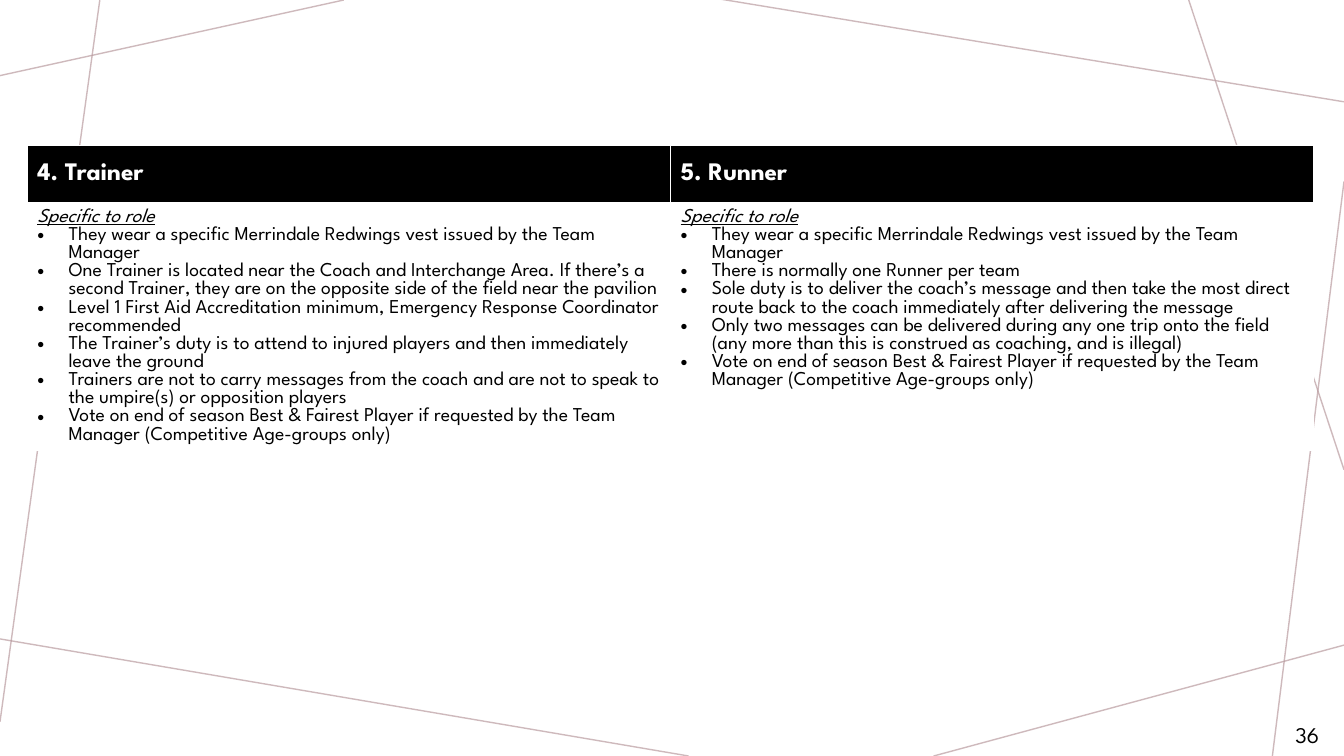
from lxml import etree
from pptx import Presentation
from pptx import util as u
from pptx.dml.color import RGBColor
from pptx.enum import shapes, text
from pptx.oxml import ns

BLACK = RGBColor(0x00, 0x00, 0x00)
WHITE = RGBColor(0xFF, 0xFF, 0xFF)
MAUVE = RGBColor(0xBA, 0x9C, 0xA0)

BACKGROUND_LINES = [
    ((3.41, 0), (0, 0.75)),
    ((0.99, 0), (0, 7.16)),
    ((6.83, 7.5), (-0.05, 6.33)),
    ((13.33, 6.4), (9.26, 7.5)),
    ((13.33, 1.8), (12.62, 7.5)),
    ((13.33, 4.66), (11.79, 0)),
    ((13.33, 1.01), (7.14, -0.01)),
]

# Duties shared by both roles
VEST = "They wear a specific Merrindale Redwings vest issued by the Team Manager"
VOTE = ("Vote on end of season Best & Fairest Player if requested by the Team "
        "Manager (Competitive Age-groups only)")

ROLES = {
    "4. Trainer": [
        VEST,
        "One Trainer is located near the Coach and Interchange Area. If there’s a "
        "second Trainer, they are on the opposite side of the field near the pavilion",
        "Level 1 First Aid Accreditation minimum, Emergency Response Coordinator "
        "recommended",
        "The Trainer’s duty is to attend to injured players and then immediately "
        "leave the ground",
        "Trainers are not to carry messages from the coach and are not to speak to "
        "the umpire(s) or opposition players",
        VOTE,
    ],
    "5. Runner": [
        VEST,
        "There is normally one Runner per team",
        "Sole duty is to deliver the coach’s message and then take the most direct "
        "route back to the coach immediately after delivering the message",
        "Only two messages can be delivered during any one trip onto the field "
        "(any more than this is construed as coaching, and is illegal)",
        VOTE,
    ],
}


def add_xml(parent, tag, **attributes):
    return etree.SubElement(parent, ns.qn(tag), attributes)


def write(para, words, size=14, color=BLACK, bold=False, italic=False,
          underline=False, bullet=False, font="League Spartan"):
    span = para.add_run()
    span.text = words
    span.font.name = font
    span.font.size = u.Pt(size)
    span.font.color.rgb = color
    span.font.bold = bold
    span.font.italic = italic
    span.font.underline = underline
    if bullet:
        indent = u.Inches(0.31)
        properties = para._p.get_or_add_pPr()
        properties.set("marL", str(indent))
        properties.set("indent", str(-indent))
        add_xml(add_xml(properties, "a:buClr"), "a:srgbClr", val=str(color))
        add_xml(properties, "a:buFont", typeface="Arial")
        add_xml(properties, "a:buChar", char="•")


class RolesSlide:
    def __init__(self, deck):
        self.slide = deck.slides.add_slide(deck.slide_layouts[6])
        self.slide.background.fill.solid()
        self.slide.background.fill.fore_color.rgb = WHITE

    def line(self, start, end, color=MAUVE, opacity=70):
        points = [u.Inches(value) for value in (*start, *end)]
        line = self.slide.shapes.add_connector(shapes.MSO_CONNECTOR.STRAIGHT, *points)
        line.line.color.rgb = color
        line.line.width = u.Pt(1)
        tint = line._element.find(".//" + ns.qn("a:srgbClr"))
        add_xml(tint, "a:alpha", val=str(opacity * 1000))
        add_xml(line._element.spPr, "a:effectLst")

    def cell(self, cell, fill, bottom=1):
        cell.fill.solid()
        cell.fill.fore_color.rgb = fill
        # Borders come before the fill
        properties = cell._tc.get_or_add_tcPr()
        widths = {"a:lnL": 1, "a:lnR": 1, "a:lnT": 1, "a:lnB": bottom}
        for position, (side, width) in enumerate(widths.items()):
            border = add_xml(properties, side, w=str(u.Pt(width)))
            add_xml(add_xml(border, "a:solidFill"), "a:srgbClr", val=str(WHITE))
            properties.insert(position, border)

    def table(self, roles, left, top, column_width, row_heights):
        frame = self.slide.shapes.add_table(
            len(row_heights), len(roles), u.Inches(left), u.Inches(top),
            u.Inches(column_width * len(roles)), u.Inches(sum(row_heights)))
        table = frame.table
        for row, height in zip(table.rows, row_heights):
            row.height = u.Inches(height)
        for column, (role, duties) in enumerate(roles.items()):
            table.columns[column].width = u.Inches(column_width)
            header, body = table.cell(0, column), table.cell(1, column)
            self.cell(header, BLACK, bottom=3)
            header.vertical_anchor = text.MSO_ANCHOR.MIDDLE
            write(header.text_frame.paragraphs[0], role, size=18, color=WHITE, bold=True)
            self.cell(body, WHITE)
            write(body.text_frame.paragraphs[0], "Specific to role",
                  italic=True, underline=True)
            for duty in duties:
                write(body.text_frame.add_paragraph(), duty, bullet=True)

    def label(self, words, left, top, width, height, **style):
        box = self.slide.shapes.add_textbox(
            u.Inches(left), u.Inches(top), u.Inches(width), u.Inches(height))
        box.text_frame.word_wrap = True
        box.text_frame.vertical_anchor = text.MSO_ANCHOR.MIDDLE
        write(box.text_frame.paragraphs[0], words, **style)


def main():
    deck = Presentation()
    deck.slide_width, deck.slide_height = u.Inches(13.33), u.Inches(7.5)
    page = RolesSlide(deck)

    # Background lines
    for start, end in BACKGROUND_LINES:
        page.line(start, end)

    # Roles side by side
    page.table(ROLES, 0.27, 1.44, column_width=6.38, row_heights=(0.58, 2.45))

    # Page number
    page.label("36", 12.75, 7.09, 0.58, 0.4, size=16)

    deck.save("out.pptx")


if __name__ == "__main__":
    main()
